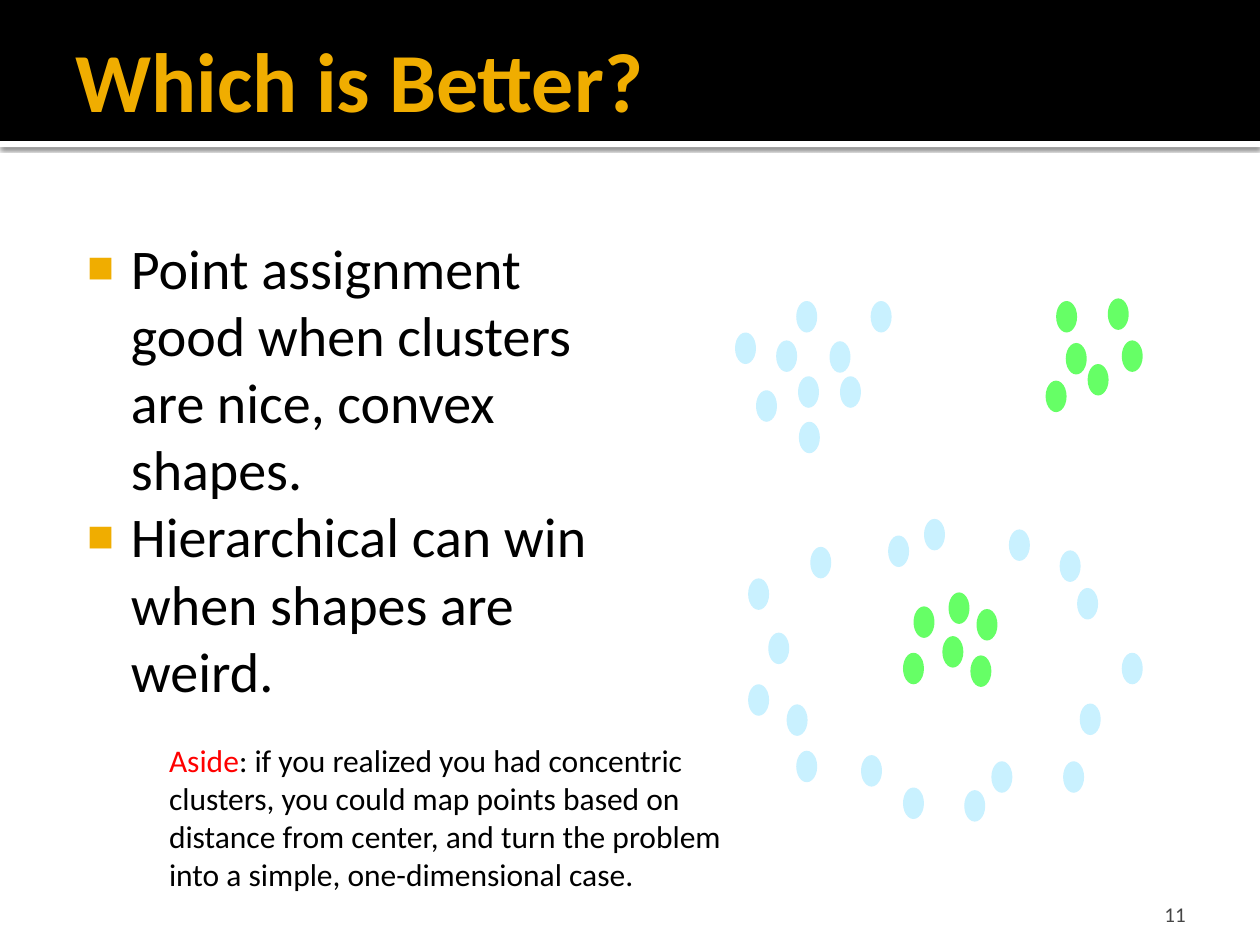
from lxml import etree
from pptx import Presentation
from pptx.dml.color import RGBColor
from pptx.enum.shapes import MSO_SHAPE
from pptx.enum.text import MSO_ANCHOR, MSO_AUTO_SIZE, PP_ALIGN
from pptx.oxml.ns import qn
from pptx.util import Pt

RECTANGLE, OVAL = MSO_SHAPE.RECTANGLE, MSO_SHAPE.OVAL
TOP, MIDDLE, BOTTOM = MSO_ANCHOR.TOP, MSO_ANCHOR.MIDDLE, MSO_ANCHOR.BOTTOM
LEFT, RIGHT = PP_ALIGN.LEFT, PP_ALIGN.RIGHT
GROW = MSO_AUTO_SIZE.SHAPE_TO_FIT_TEXT

BLACK, WHITE, GOLD, RED, GRAY = "000000", "FFFFFF", "F0AD00", "FF0000", "454545"
PALE_BLUE, GREEN = "C9F1FF", "66FF66"

CONVEX_CLUSTERS = {
    PALE_BLUE: [(420, 190), (455, 172), (443.5, 194.5), (474, 195), (432, 223),
                (456, 215), (480, 215), (456.5, 241), (497.5, 172)],
    GREEN: [(609, 196), (621.5, 208), (641, 194.5), (603.5, 172),
            (597.5, 217.5), (633, 170.5)],
}
RING_CLUSTERS = {
    PALE_BLUE: [(427.5, 330.5), (463, 312.5), (576.5, 302.5), (516, 450),
                (439, 361.5), (607.5, 435), (617, 402), (455, 429),
                (528, 296.5), (566.5, 435), (641, 373), (492, 431.5),
                (615.5, 336), (551, 451.5), (605.5, 314.5), (449.5, 402.5),
                (427.5, 391), (507.5, 306)],
    GREEN: [(542, 338.5), (538.5, 363.5), (558, 348), (522, 346.5),
            (516, 373), (554.5, 374.5)],
}
BULLETS = [
    "Point assignment good when clusters are nice, convex shapes.",
    "Hierarchical can win when shapes are weird.",
]
ASIDE = [
    [("Aside", RED), ": if you realized you had concentric"],
    "clusters, you could map points based on",
    "distance from center, and turn the problem",
    "into a simple, one-dimensional case.",
]


def rgb(value):
    """Turn a hex string into a colour."""
    return RGBColor.from_string(value)


def add_element(parent, tag, **attributes):
    """Append a drawing element with attributes and return it."""
    element = etree.SubElement(parent, qn(tag))
    for name, value in attributes.items():
        element.set(name, str(value))
    return element


class SlideBuilder:
    """Hold the style and the slide being built."""

    font = "Calibri"
    dot_size = (12, 18)
    bullet_left, bullet_hang = 34.5, 25

    def __init__(self, slide):
        """Keep the slide to draw on."""
        self.slide = slide

    def shape(self, kind, box, color, parent=None):
        """Add a filled shape without outline to the slide or a group."""
        shapes = (parent or self.slide).shapes
        shape = shapes.add_shape(kind, *map(Pt, box))
        shape.fill.solid()
        shape.fill.fore_color.rgb = rgb(color)
        shape.line.fill.background()
        shape.shadow.inherit = False
        return shape

    def drop_shadow(self, shape, blur, distance, opacity):
        """Give a shape a soft black shadow straight below it."""
        effects = shape._element.spPr.find(qn("a:effectLst"))
        shadow = add_element(effects, "a:outerShdw", blurRad=Pt(blur),
                             dist=Pt(distance), dir=90 * 60000,
                             algn="ctr", rotWithShape=0)
        color = add_element(shadow, "a:srgbClr", val=BLACK)
        add_element(color, "a:alpha", val=opacity * 1000)

    def clusters(self, points_by_color):
        """Add one group of dots, coloured by cluster."""
        group = self.slide.shapes.add_group_shape()
        for color, points in points_by_color.items():
            for point in points:
                self.shape(OVAL, (*point, *self.dot_size), color, group)

    def bullet(self, paragraph):
        """Give a paragraph a hanging square bullet."""
        properties = paragraph._p.get_or_add_pPr()
        properties.set("marL", str(Pt(self.bullet_left)))
        properties.set("indent", str(-Pt(self.bullet_hang)))
        color = add_element(properties, "a:buClr")
        add_element(color, "a:srgbClr", val=GOLD)
        add_element(properties, "a:buSzPct", val=80000)
        add_element(properties, "a:buFont", typeface="Arial")
        add_element(properties, "a:buChar", char="■")

    def text(self, paragraphs, box, size, color=BLACK, bold=False, align=LEFT,
             anchor=TOP, insets=(7.2, 3.6, 7.2, 3.6), wrap=True, grow=False,
             bullets=False):
        """Add a text box; a paragraph is a string or a list of runs."""
        frame = self.slide.shapes.add_textbox(*map(Pt, box)).text_frame
        frame.word_wrap = wrap
        frame.vertical_anchor = anchor
        if grow:
            frame.auto_size = GROW
        (frame.margin_left, frame.margin_top,
         frame.margin_right, frame.margin_bottom) = map(Pt, insets)
        for index, content in enumerate(paragraphs):
            paragraph = frame.add_paragraph() if index else frame.paragraphs[0]
            paragraph.alignment = align
            if bullets:
                self.bullet(paragraph)
            for part in [content] if isinstance(content, str) else content:
                words, run_color = (part, color) if isinstance(part, str) else part
                run = paragraph.add_run()
                run.text = words
                run.font.name = self.font
                run.font.size = Pt(size)
                run.font.bold = bold
                run.font.color.rgb = rgb(run_color)


def main():
    """Build the slide and save it."""
    presentation = Presentation()
    presentation.slide_width, presentation.slide_height = Pt(720), Pt(540)
    slide = presentation.slides.add_slide(presentation.slide_layouts[6])
    builder = SlideBuilder(slide)

    rule = builder.shape(RECTANGLE, (0, 80.5, 720, 3.6), WHITE)
    builder.drop_shadow(rule, blur=2.5, distance=0.8, opacity=60)
    builder.shape(RECTANGLE, (0, 0, 720, 80.5), BLACK)

    builder.text(["Which is Better?"], (36, 0, 648, 90), 48, color=GOLD,
                 bold=True, anchor=MIDDLE, insets=(7.2, 3.6, 3.6, 3.6))
    builder.text(BULLETS, (36, 126, 318, 356.5), 32, bullets=True,
                 insets=(4.3, 7.2, 6.5, 3.6))
    builder.text(["11"], (516, 492, 168, 37.5), 12, color=GRAY, align=RIGHT,
                 anchor=BOTTOM, insets=(6.5, 3.6, 6.5, 0))

    builder.clusters(CONVEX_CLUSTERS)
    builder.clusters(RING_CLUSTERS)
    builder.text(ASIDE, (89.5, 420, 336, 94.5), 18, wrap=False, grow=True)

    presentation.save("out.pptx")


if __name__ == "__main__":
    main()
